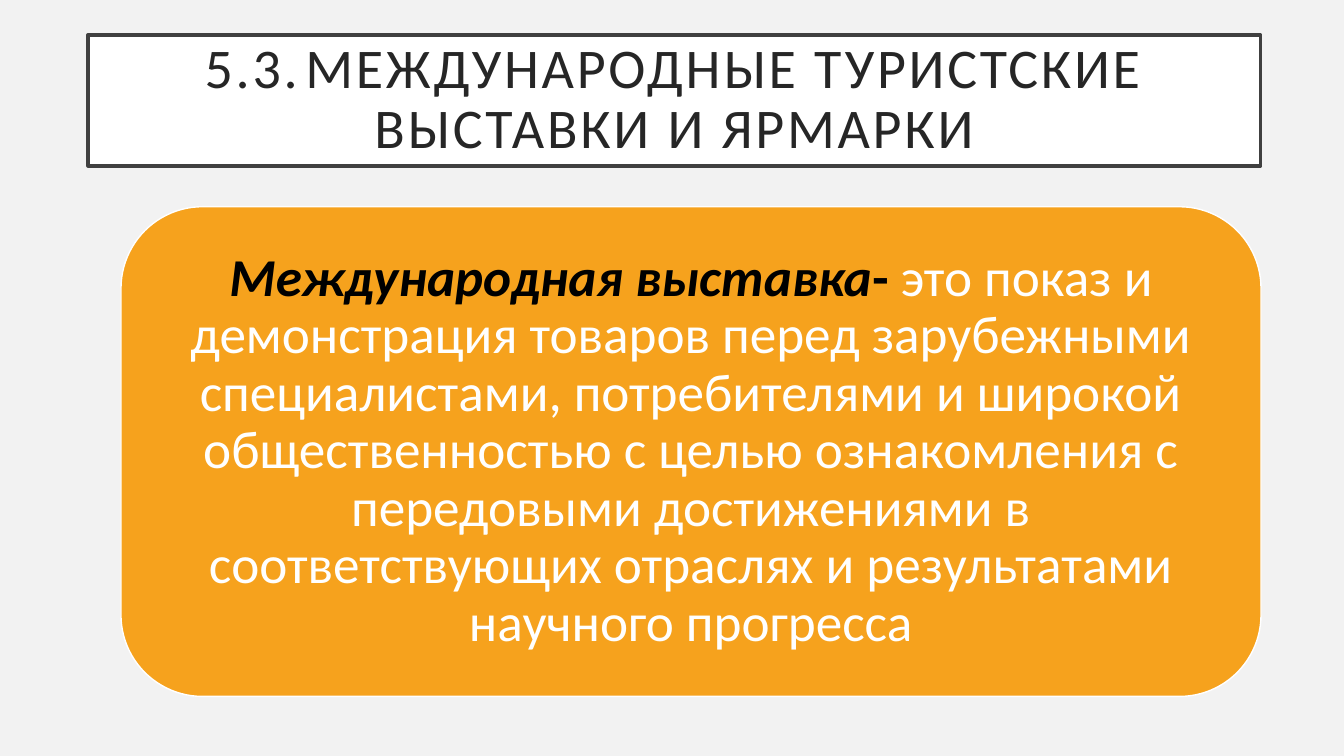
from dataclasses import dataclass

from pptx import Presentation
from pptx.dml.color import RGBColor
from pptx.enum.shapes import MSO_SHAPE
from pptx.enum.text import MSO_ANCHOR, MSO_AUTO_SIZE, PP_ALIGN
from pptx.util import Cm, Pt

ROUNDED = MSO_SHAPE.ROUNDED_RECTANGLE
MIDDLE = MSO_ANCHOR.MIDDLE
NO_AUTOFIT = MSO_AUTO_SIZE.NONE
CENTER = PP_ALIGN.CENTER

COLORS = {
    "background": "F2F2F2",
    "white": "FFFFFF",
    "border": "404040",
    "title": "262626",
    "card": "F6A21D",
    "term": "000000",
}


@dataclass(frozen=True)
class Phrase:
    text: str
    color: str
    bold: bool = False
    italic: bool = False
    spacing: int = 0


@dataclass(frozen=True)
class Panel:
    left: float
    top: float
    width: float
    height: float
    fill: str
    line: str
    line_width: float
    inset: float
    font_size: int
    phrases: tuple[Phrase, ...]


TITLE = Panel(
    2.22, 0.88, 29.55, 3.3, "white", "border", 2.5, 0.51, 40,
    (Phrase("5.3.\tМЕЖДУНАРОДНЫЕ ТУРИСТСКИЕ ВЫСТАВКИ И ЯРМАРКИ", "title", spacing=200),),
)
DEFINITION = Panel(
    3.05, 5.21, 28.73, 12.34, "card", "white", 1, 0.41, 38,
    (
        Phrase("Международная выставка", "term", bold=True, italic=True),
        Phrase("- ", "term", bold=True),
        Phrase(
            "это показ и демонстрация товаров перед зарубежными специалистами, "
            "потребителями и широкой общественностью с целью ознакомления с "
            "передовыми достижениями в соответствующих отраслях и результатами "
            "научного прогресса",
            "white",
        ),
    ),
)


def color(name: str) -> RGBColor:
    return RGBColor.from_string(COLORS[name])


def format_panel(shape, panel: Panel) -> None:
    shape.left, shape.top = Cm(panel.left), Cm(panel.top)
    shape.width, shape.height = Cm(panel.width), Cm(panel.height)
    shape.fill.solid()
    shape.fill.fore_color.rgb = color(panel.fill)
    shape.line.color.rgb = color(panel.line)
    shape.line.width = Pt(panel.line_width)

    frame = shape.text_frame
    frame.word_wrap = True
    frame.auto_size = NO_AUTOFIT
    frame.vertical_anchor = MIDDLE
    frame.margin_left = frame.margin_right = Cm(panel.inset)
    frame.margin_top = frame.margin_bottom = Cm(panel.inset)

    paragraph = frame.paragraphs[0]
    paragraph.alignment = CENTER
    paragraph.line_spacing = 0.9
    paragraph.font.name = "Calibri"
    paragraph.font.size = Pt(panel.font_size)
    for phrase in panel.phrases:
        run = paragraph.add_run()
        run.text = phrase.text
        run.font.bold = phrase.bold
        run.font.italic = phrase.italic
        run.font.color.rgb = color(phrase.color)
        if phrase.spacing:
            run._r.get_or_add_rPr().set("spc", str(phrase.spacing))


def main() -> None:
    presentation = Presentation()
    presentation.slide_width = Cm(33.87)
    presentation.slide_height = Cm(19.05)
    slide = presentation.slides.add_slide(presentation.slide_layouts[5])
    slide.background.fill.solid()
    slide.background.fill.fore_color.rgb = color("background")

    format_panel(slide.shapes.title, TITLE)
    card = slide.shapes.add_shape(ROUNDED, 0, 0, Cm(1), Cm(1))
    card.shadow.inherit = False
    format_panel(card, DEFINITION)

    presentation.save("out.pptx")


if __name__ == "__main__":
    main()
